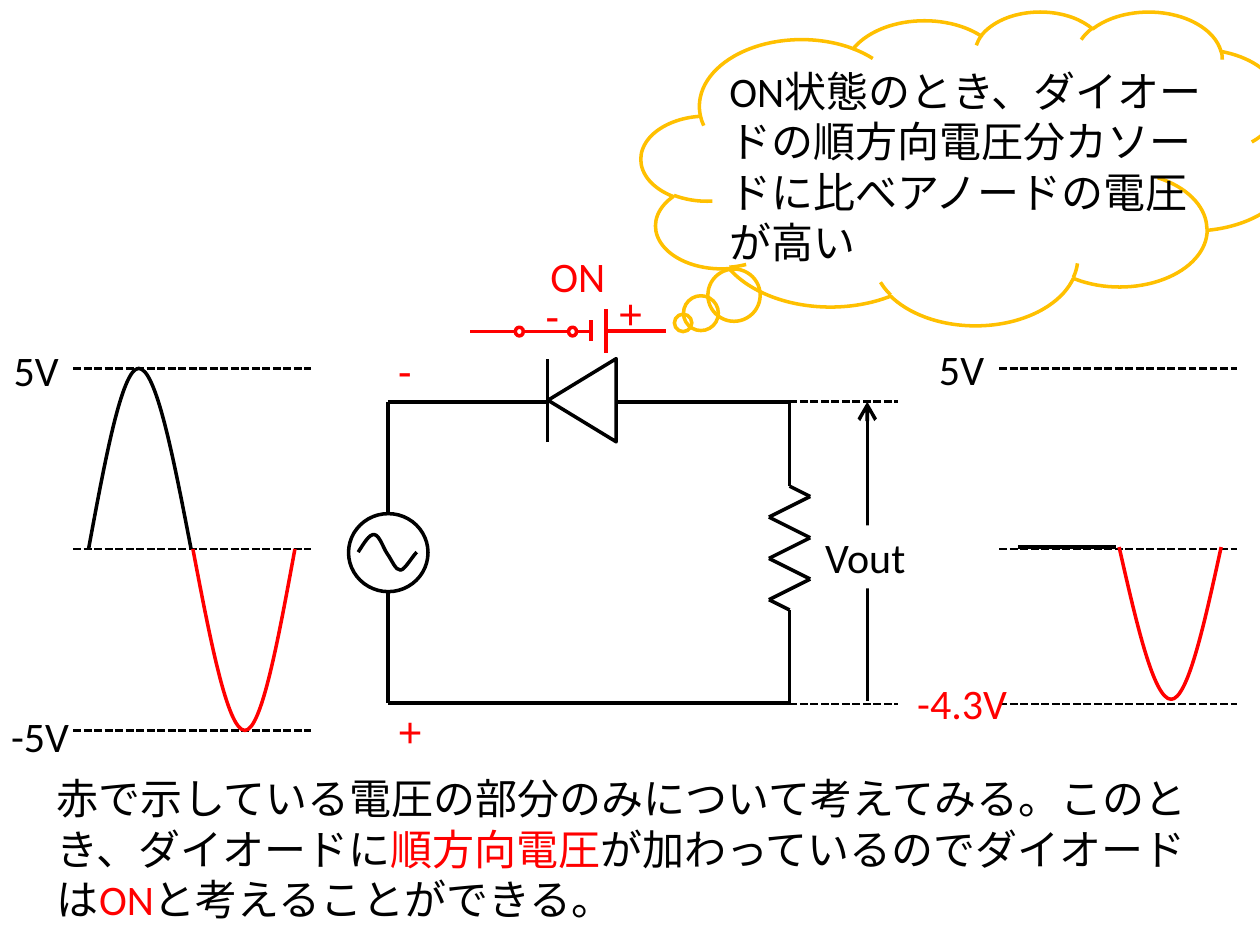
import itertools

import pptx
import pptx.dml.color
import pptx.enum.dml
import pptx.enum.lang
import pptx.enum.shapes
import pptx.enum.text
import pptx.oxml.ns
import pptx.util
from lxml import etree

Pt = pptx.util.Pt
Kind = pptx.enum.shapes.MSO_SHAPE
qn = pptx.oxml.ns.qn

THEME = {
    "ink": "000000", "hot": "FF0000", "cloud": "FFC000", "paper": "FFFFFF",
    "size": 24, "line": 2, "dash": 1.5, "face": "Calibri", "sign": "Arial",
}

# Circuit frame, in points
LEFT, RIGHT, TOP, BASE = 221.7, 451.2, 229.6, 401.6
PEAK, ZERO, LOW = 210.5, 313.7, 417.4

# Resistor: full teeth between two half steps
ZIG_TOP, ZIG_STEP, ZIG_SIDE, TEETH = 277.8, 11.8, 11.8, 6

WIRES = [
    (LEFT, TOP, LEFT, 294), (313, TOP, LEFT, TOP), (RIGHT, TOP, 352, TOP),
    (RIGHT, ZIG_TOP, RIGHT, TOP),
    (RIGHT, ZIG_TOP + TEETH * ZIG_STEP, RIGHT, BASE),
    (LEFT, 338.5, LEFT, BASE), (RIGHT, BASE, LEFT, BASE),
    (312.8, 252.6, 312.8, 205.2),   # diode bar
    (637.8, 312.6, 581.5, 312.6),   # flat half of the output
]
MODEL = [  # closed switch and battery that stand for the diode
    (337.7, 189.5, 268.6, 189.5), (337.7, 195, 337.7, 183),
    (346.4, 201.6, 346.4, 176.4), (380.4, 189.2, 346.8, 189.2),
]
GUIDES = [(x, y, x + 136, y) for x, rows in (
    (41.8, (PEAK, ZERO, LOW)), (571, (PEAK, ZERO, 402.2))) for y in rows]
GUIDES += [(451, y, 513.4, y) for y in (TOP, 402.2)]

# start x, base y, width, height (downwards when positive), lean, colour
HALVES = [
    (50.6, ZERO, 58.6, PEAK - ZERO, 0.49, "ink"),
    (110.2, ZERO, 58.3, LOW - ZERO, 0.51, "hot"),
    (639.5, 312.6, 58.3, 87, 0.51, "hot"),
]
RIPPLE = [  # wave inside the source, cubic control points
    (204.7, 315.5), (208, 310.5), (211, 305), (214, 305.5),
    (217, 306), (219, 313), (221.3, 316.4),
    (224, 320), (226, 326), (229, 325.8),
    (231.5, 325.4), (236, 317.5), (238.2, 315.5),
]

# x, y, width, height, face, runs
LABELS = [
    (0.7, 193.4, 50, 36, "face", [("5V", "ink")]),
    (-0.7, 402.5, 50, 36, "face", [("-5V", "ink")]),
    (529.5, 193, 50, 36, "face", [("5V", "ink")]),
    (517, 383.8, 70, 36, "face", [("-4.3V", "hot")]),
    (307.4, 139.7, 50, 36, "face", [("ON", "hot")]),
    (220.3, 193.3, 50, 36, "sign", [("-", "hot")]),
    (220.3, 399.6, 50, 36, "sign", [("+", "hot")]),
    (304.6, 162, 50, 36, "sign", [("-", "hot")]),
    (346.3, 160.6, 50, 36, "sign", [("+", "hot")]),
    (409.7, 33.8, 298, 124, "face", [
        ("ON状態のとき、ダイオードの順方向電圧分カソードに比べ"
         "アノードの電圧が高い", "ink")]),
    (25.5, 438, 674.6, 94.3, "face", [
        ("赤で示している電圧の部分のみについて考えてみる。"
         "このとき、ダイオードに", "ink"),
        ("順方向電圧", "hot"),
        ("が加わっているのでダイオードは", "ink"),
        ("ON", "hot"),
        ("と考えることができる。", "ink")]),
]


def tint(name):
    return pptx.dml.color.RGBColor.from_string(THEME[name])


def stroke(item, color, width="line"):
    item.line.color.rgb = tint(color)
    item.line.width = Pt(THEME[width])


def wire(slide, ends, color="ink", width="line"):
    link = slide.shapes.add_connector(
        pptx.enum.shapes.MSO_CONNECTOR.STRAIGHT, *map(Pt, ends))
    stroke(link, color, width)
    etree.SubElement(link._element.spPr, qn("a:effectLst"))
    return link


def solid(slide, kind, box, color="ink", fill="paper"):
    shape = slide.shapes.add_shape(kind, *map(Pt, box))
    shape.shadow.inherit = False
    if fill:
        shape.fill.solid()
        shape.fill.fore_color.rgb = tint(fill)
    else:
        shape.fill.background()
    if color:
        stroke(shape, color)
    else:
        shape.line.fill.background()
    return shape


def curve(slide, nodes, color):
    """Draw a chain of cubic curves that share their end nodes."""
    dots = [(Pt(x), Pt(y)) for x, y in nodes]
    pen = slide.shapes.build_freeform(*dots[0])
    pen.add_line_segments(dots[1:], close=False)
    shape = pen.convert_to_shape()
    # Each three line segments become one cubic segment
    lines = list(shape._element.iter(qn("a:lnTo")))
    for i in range(0, len(lines), 3):
        bend = etree.Element(qn("a:cubicBezTo"))
        lines[i].addprevious(bend)
        for line in lines[i:i + 3]:
            bend.append(line[0])
            line.getparent().remove(line)
    shape.shadow.inherit = False
    shape.fill.background()
    stroke(shape, color)


def half(x, y, wide, high, lean):
    """Control points of one half wave whose peak lies at lean of its width."""
    rises = (0, 0.5, 1, 1, 1, 0.5, 0)
    spots = [lean * i / 3 for i in range(4)]
    spots += [lean + (1 - lean) * i / 3 for i in range(1, 4)]
    return [(x + wide * s, y + high * r) for s, r in zip(spots, rises)]


def write(shape, runs, face):
    frame = shape.text_frame
    frame.word_wrap = True
    frame.vertical_anchor = pptx.enum.text.MSO_ANCHOR.TOP
    para = frame.paragraphs[0]
    para.alignment = pptx.enum.text.PP_ALIGN.LEFT
    for text, color in runs:
        run = para.add_run()
        run.text = text
        run.font.size = Pt(THEME["size"])
        run.font.name = THEME[face]
        run.font.color.rgb = tint(color)
        run.font.language_id = pptx.enum.lang.MSO_LANGUAGE_ID.JAPANESE


def main():
    deck = pptx.Presentation()
    deck.slide_width, deck.slide_height = Pt(720), Pt(540)
    slide = deck.slides.add_slide(deck.slide_layouts[6])

    for ends in GUIDES:
        link = wire(slide, ends, width="dash")
        link.line.dash_style = pptx.enum.dml.MSO_LINE.SQUARE_DOT

    solid(slide, Kind.OVAL, (199.2, 293.5, 45.4, 44.6))
    curve(slide, RIPPLE, "ink")
    diode = solid(slide, Kind.ISOSCELES_TRIANGLE, (308.9, 209.2, 47.5, 39))
    diode.rotation = 270
    for ends in WIRES:
        wire(slide, ends)

    zig = [(RIGHT, ZIG_TOP)]
    zig += [(RIGHT + ZIG_SIDE * (-1) ** i, ZIG_TOP + ZIG_STEP * (i + 0.5))
            for i in range(TEETH)]
    zig.append((RIGHT, ZIG_TOP + TEETH * ZIG_STEP))
    for start, end in itertools.pairwise(zig):
        wire(slide, end + start)

    arrow = wire(slide, (495.6, TOP, 495.6, 400.5))
    etree.SubElement(arrow.line._get_or_add_ln(), qn("a:headEnd"),
                     type="arrow", w="lg", len="lg")
    vout = solid(slide, Kind.RECTANGLE, (464.4, 300.3, 62.6, 36), None)
    write(vout, [("Vout", "ink")], "face")

    for *box, color in HALVES:
        curve(slide, half(*box), color)

    cloud = solid(slide, Kind.CLOUD_CALLOUT, (366.5, 6.3, 373.5, 179.3),
                  "cloud", None)
    cloud.adjustments[0], cloud.adjustments[1] = -0.436, 0.494

    for ends in MODEL:
        wire(slide, ends, "hot")
    for x in (294.5, 324.9):
        solid(slide, Kind.OVAL, (x, 187, 4.6, 5), "hot")

    for *box, face, runs in LABELS:
        write(slide.shapes.add_textbox(*map(Pt, box)), runs, face)

    deck.save("out.pptx")


if __name__ == "__main__":
    main()
